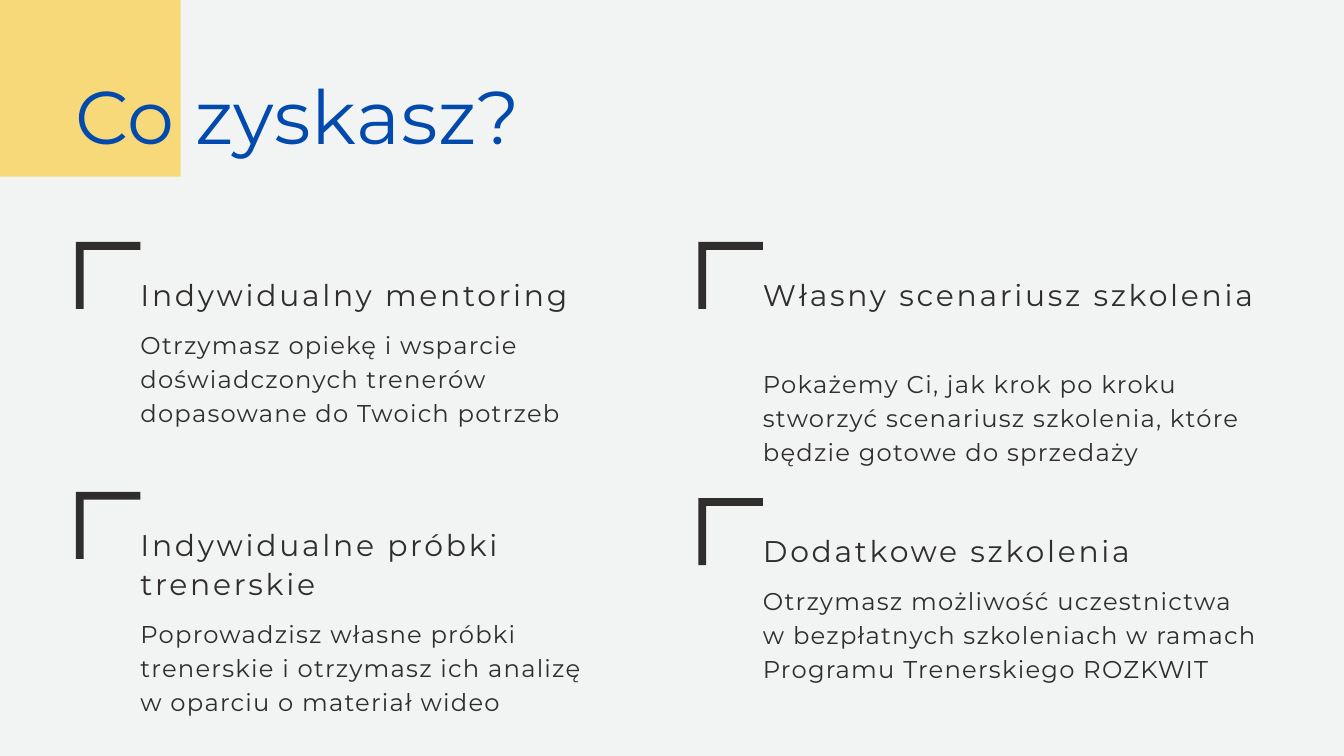
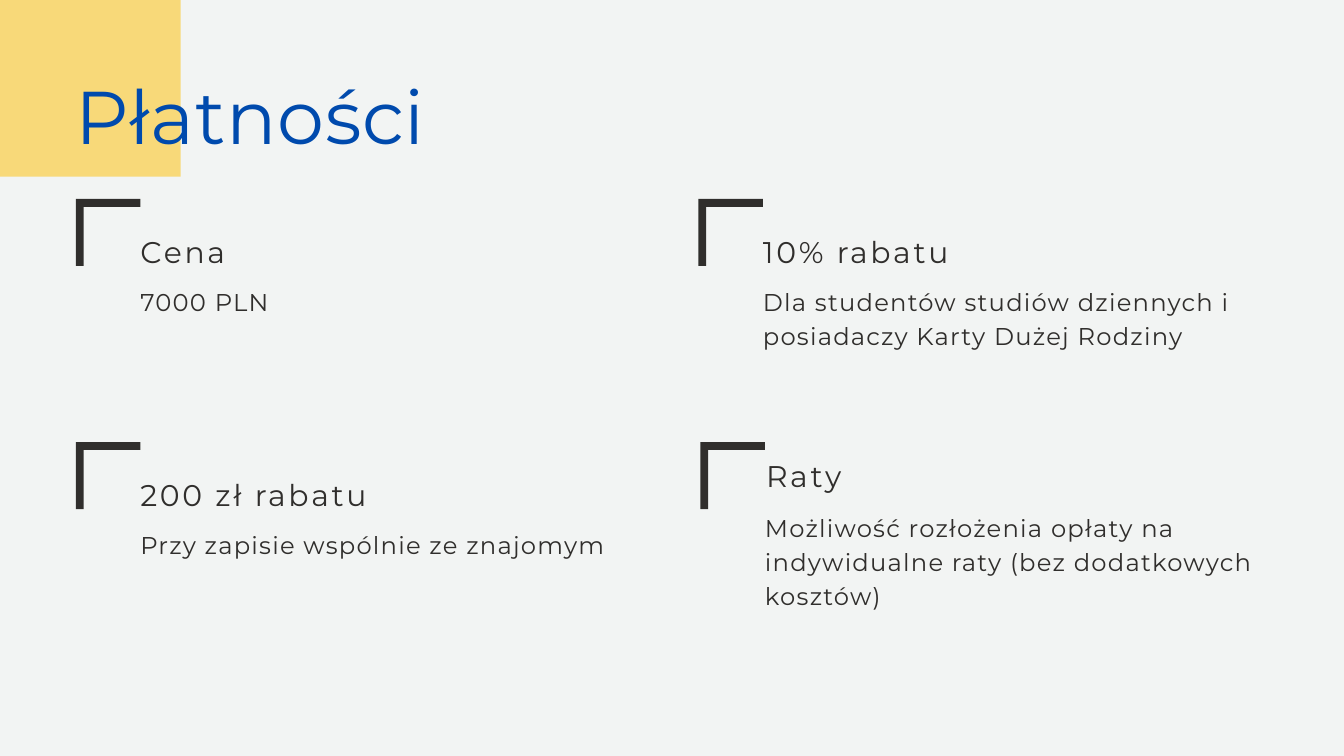
from dataclasses import dataclass

from pptx import Presentation
from pptx.dml.color import RGBColor
from pptx.enum.shapes import MSO_SHAPE as Shape
from pptx.enum.text import MSO_ANCHOR as Anchor, MSO_AUTO_SIZE as AutoSize, PP_ALIGN as Align
from pptx.oxml import parse_xml
from pptx.oxml.ns import nsdecls
from pptx.shapes.base import BaseShape
from pptx.slide import Slide
from pptx.text.text import TextFrame
from pptx.util import Pt

PAPER = RGBColor(0xF2, 0xF4, 0xF3)
AMBER = RGBColor(0xFF, 0xBF, 0x00)
BLUE = RGBColor(0x00, 0x4A, 0xAD)
INK = RGBColor(0x30, 0x2E, 0x2C)

LEFT, RIGHT = 81.2, 748.2
BRACKET_W, BRACKET_H, BRACKET_THICK = 69.2, 71.8, 8.4
TEXT_W = 541.4
HEADING_DROP = 33.8
BODY_GAP = 14.2


@dataclass(frozen=True)
class TextStyle:
    size: float
    leading: float
    tracking: float
    color: RGBColor


TITLE = TextStyle(80, 108.8, 0.8, BLUE)
HEADING = TextStyle(32, 41.6, 2.9, INK)
BODY = TextStyle(26, 36.4, 1.3, INK)


@dataclass(frozen=True)
class Benefit:
    left: float
    top: float
    heading: str
    body: str
    body_lines: int = 3
    heading_lines: int = 1
    heading_dx: float = 0
    heading_dy: float = 0
    body_dy: float = 0


SLIDES = {
    "Co zyskasz?": [
        Benefit(LEFT, 259.2, "Indywidualny mentoring",
                "Otrzymasz opiekę i wsparcie doświadczonych trenerów "
                "dopasowane do Twoich potrzeb"),
        Benefit(LEFT, 527, "Indywidualne próbki trenerskie",
                "Poprowadzisz własne próbki trenerskie i otrzymasz ich analizę\n"
                "w oparciu o materiał wideo", heading_lines=2),
        Benefit(RIGHT, 259.2, "Własny scenariusz szkolenia",
                "Pokażemy Ci, jak krok po kroku stworzyć scenariusz szkolenia, "
                "które będzie gotowe do sprzedaży", heading_lines=2),
        Benefit(RIGHT, 533.6, "Dodatkowe szkolenia",
                "Otrzymasz możliwość uczestnictwa\n"
                "w bezpłatnych szkoleniach w ramach Programu Trenerskiego ROZKWIT"),
    ],
    "Płatności": [
        Benefit(LEFT, 213.2, "Cena", "7000 PLN", body_lines=1),
        Benefit(RIGHT, 213.2, "10% rabatu",
                "Dla studentów studiów dziennych i posiadaczy Karty Dużej Rodziny",
                body_lines=2),
        Benefit(LEFT, 473.6, "200 zł rabatu", "Przy zapisie wspólnie ze znajomym",
                body_lines=1),
        Benefit(RIGHT + 2.2, 473.6, "Raty",
                "Możliwość rozłożenia opłaty na indywidualne raty "
                "(bez dodatkowych kosztów)",
                heading_dx=1.2, heading_dy=-20, body_dy=-18.2),
    ],
}


def write(tf: TextFrame, text: str, style: TextStyle) -> None:
    frame = dict(word_wrap=True, auto_size=AutoSize.NONE, vertical_anchor=Anchor.TOP,
                 margin_left=0, margin_top=0, margin_right=0, margin_bottom=0)
    for name, value in frame.items():
        setattr(tf, name, value)
    for i, line in enumerate(text.split("\n")):
        p = tf.add_paragraph() if i else tf.paragraphs[0]
        p.alignment = Align.LEFT
        p.line_spacing = Pt(style.leading)
        r = p.add_run()
        r.text = line
        for name, value in dict(name="Montserrat", size=Pt(style.size)).items():
            setattr(r.font, name, value)
        r.font.color.rgb = style.color
        r._r.get_or_add_rPr().set("spc", str(round(style.tracking * 100)))


def paint(sp: BaseShape, color: RGBColor) -> None:
    sp.shadow.inherit = False
    sp.fill.solid()
    sp.fill.fore_color.rgb = color
    sp.line.fill.background()


def add_text(shapes, left: float, top: float, lines: int, text: str,
             style: TextStyle) -> None:
    box = shapes.add_textbox(Pt(left), Pt(top), Pt(TEXT_W), Pt(lines * style.leading))
    write(box.text_frame, text, style)


def add_bracket(shapes, left: float, top: float) -> None:
    w, h, t = BRACKET_W, BRACKET_H, BRACKET_THICK
    outline = [(0, h), (t, h), (t, t), (w, t), (w, 0)]
    builder = shapes.build_freeform(Pt(left), Pt(top))
    builder.add_line_segments([(Pt(left + x), Pt(top + y)) for x, y in outline], close=True)
    paint(builder.convert_to_shape(), INK)


def add_benefit(s: Slide, b: Benefit) -> None:
    shapes = s.shapes.add_group_shape().shapes
    text_left = b.left + BRACKET_W
    text_top = b.top + HEADING_DROP
    body_top = text_top + b.heading_lines * HEADING.leading + BODY_GAP
    add_text(shapes, text_left + b.heading_dx, text_top + b.heading_dy,
             b.heading_lines, b.heading, HEADING)
    add_text(shapes, text_left, body_top + b.body_dy, b.body_lines, b.body, BODY)
    add_bracket(shapes, b.left, b.top)


def add_title(s: Slide, text: str) -> None:
    """Fill the title and lay the translucent corner square behind it."""
    title = s.shapes.title
    place = dict(left=80.6, top=62, width=1245, height=105.8)
    for name, value in place.items():
        setattr(title, name, Pt(value))
    write(title.text_frame, text, TITLE)

    square = s.shapes.add_shape(Shape.RECTANGLE, Pt(-22.4), Pt(-20.8), Pt(216), Pt(210.2))
    paint(square, AMBER)
    color = square.fill._xPr.solidFill[0]
    color.append(parse_xml(f'<a:alpha {nsdecls("a")} val="50000"/>'))
    title._element.addprevious(square._element)


def main() -> None:
    prs = Presentation()
    prs.slide_width, prs.slide_height = Pt(1440), Pt(810)
    background = prs.slide_master.background.fill
    background.solid()
    background.fore_color.rgb = PAPER
    title_only = prs.slide_layouts.get_by_name("Title Only")
    for title, benefits in SLIDES.items():
        s = prs.slides.add_slide(title_only)
        add_title(s, title)
        for benefit in benefits:
            add_benefit(s, benefit)
    prs.save("out.pptx")


if __name__ == "__main__":
    main()
